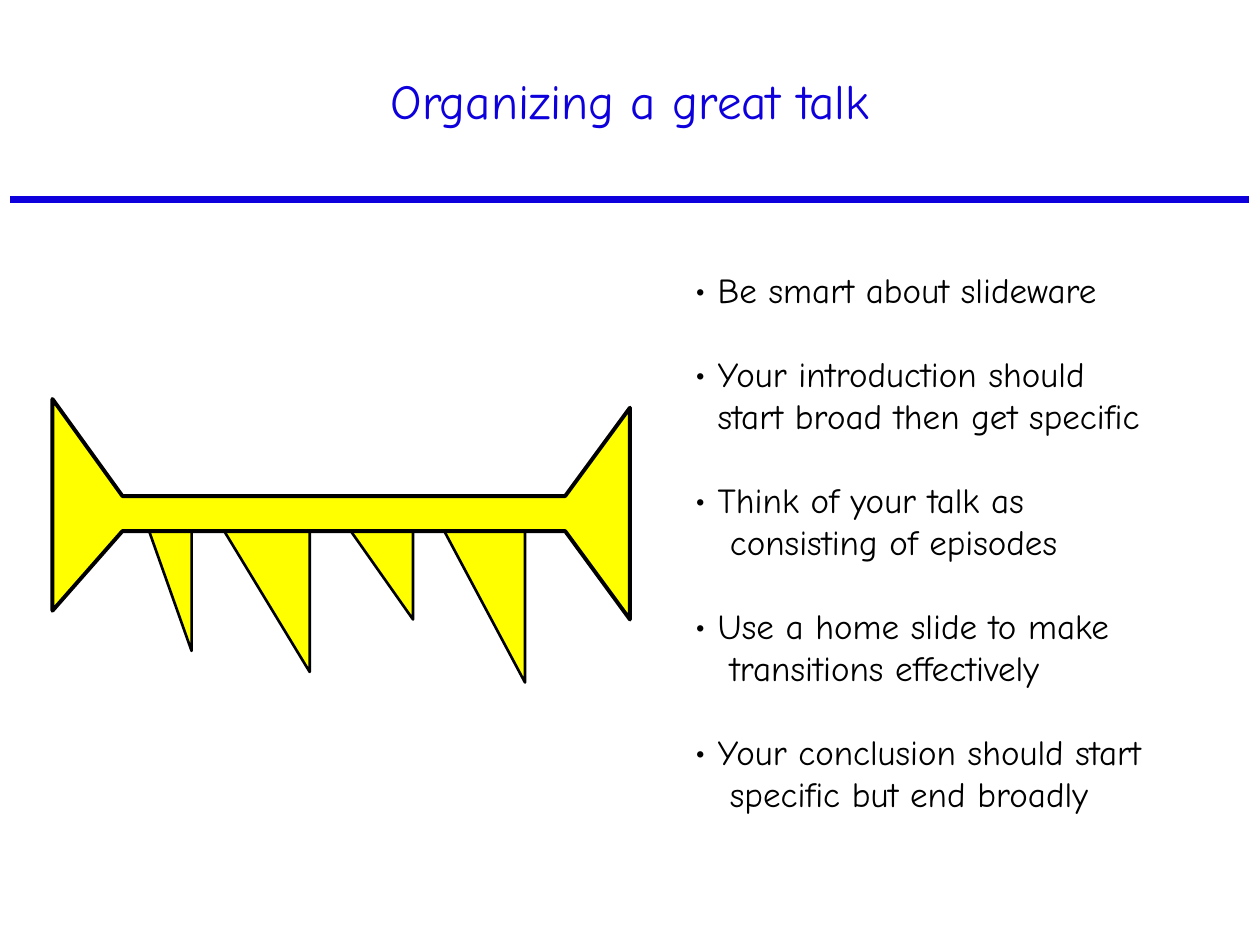
from lxml import etree
from pptx import Presentation
from pptx.dml.color import RGBColor
from pptx.enum.shapes import MSO_CONNECTOR
from pptx.enum.text import MSO_ANCHOR, PP_ALIGN
from pptx.oxml.ns import qn
from pptx.util import Pt

STRAIGHT = MSO_CONNECTOR.STRAIGHT
MIDDLE, TOP = MSO_ANCHOR.MIDDLE, MSO_ANCHOR.TOP
CENTER, LEFT = PP_ALIGN.CENTER, PP_ALIGN.LEFT

FONT = "Comic Neue"
BLUE, YELLOW, BLACK = "0E00DC", "FFFF00", "000000"

TITLE = "Organizing a great talk"
# Each point: first line, continuation line, extra indent of the continuation
ADVICE = [
    ("Be smart about slideware", None, 0),
    ("Your introduction should", "start broad then get specific", 0),
    ("Think of your talk as", "consisting of episodes", 7),
    ("Use a home slide to make", "transitions effectively", 7),
    ("Your conclusion should start", "specific but end broadly", 7),
]
BULLET_INDENT = 13
ADVICE_GAP = 24

# The talk: wide introduction, narrow body, wide conclusion
TALK = [(30, 228), (70, 283.5), (323, 283.5), (360, 233),
        (360, 354), (323, 303.5), (70, 303.5), (30, 349)]
# Episodes hang below the body: left, right, depth
EPISODES = [(84, 109.5, 72), (126, 177, 84), (198, 236, 54), (252, 300, 90)]
EPISODE_TOP = 300


def rgb(color):
    return RGBColor.from_string(color)


def add_outline(slide, points, line_width):
    corners = [(Pt(x), Pt(y)) for x, y in points]
    builder = slide.shapes.build_freeform(*corners[0])
    builder.add_line_segments(corners[1:], close=True)
    outline = builder.convert_to_shape()
    outline.shadow.inherit = False
    outline.fill.solid()
    outline.fill.fore_color.rgb = rgb(YELLOW)
    outline.line.color.rgb = rgb(BLACK)
    outline.line.width = Pt(line_width)


def add_text_frame(slide, left, top, width, height, anchor):
    frame = slide.shapes.add_textbox(Pt(left), Pt(top), Pt(width), Pt(height)).text_frame
    frame.word_wrap = True
    frame.vertical_anchor = anchor
    return frame


def write(paragraph, text, size, color, **layout):
    run = paragraph.add_run()
    run.text = text
    for name, value in {"name": FONT, "size": Pt(size)}.items():
        setattr(run.font, name, value)
    run.font.color.rgb = rgb(color)
    for name, value in layout.items():
        setattr(paragraph, name, value)


def indent(paragraph, margin, bullet=False):
    properties = paragraph._p.get_or_add_pPr()
    properties.set("marL", str(Pt(margin)))
    properties.set("indent", str(Pt(-margin if bullet else 0)))
    if bullet:
        etree.SubElement(properties, qn("a:buFont")).set("typeface", FONT)
        etree.SubElement(properties, qn("a:buChar")).set("char", "•")
    else:
        etree.SubElement(properties, qn("a:buNone"))


def add_advice(slide):
    frame = add_text_frame(slide, 390, 150, 306, 369, TOP)
    paragraph = frame.paragraphs[0]
    for number, (first, rest, extra) in enumerate(ADVICE):
        if number:
            paragraph = frame.add_paragraph()
        write(paragraph, first, 20, BLACK, alignment=LEFT,
              space_before=Pt(ADVICE_GAP if number else 0))
        indent(paragraph, BULLET_INDENT, bullet=True)
        if rest:
            continuation = frame.add_paragraph()
            write(continuation, rest, 20, BLACK, alignment=LEFT)
            indent(continuation, BULLET_INDENT + extra)


def main():
    deck = Presentation()
    deck.slide_width, deck.slide_height = Pt(720), Pt(540)
    slide = deck.slides.add_slide(deck.slide_layouts[6])

    title = add_text_frame(slide, 54, 12, 612, 90, MIDDLE)
    write(title.paragraphs[0], TITLE, 28, BLUE, alignment=CENTER)

    rule = slide.shapes.add_connector(STRAIGHT, Pt(6), Pt(114), Pt(714), Pt(114))
    rule.line.color.rgb = rgb(BLUE)
    rule.line.width = Pt(4.5)
    etree.SubElement(rule._element.spPr, qn("a:effectLst"))

    for left, right, depth in EPISODES:
        add_outline(slide, [(left, EPISODE_TOP), (right, EPISODE_TOP + depth),
                            (right, EPISODE_TOP)], 1.5)
    add_outline(slide, TALK, 2.25)
    add_advice(slide)
    deck.save("out.pptx")


if __name__ == "__main__":
    main()
